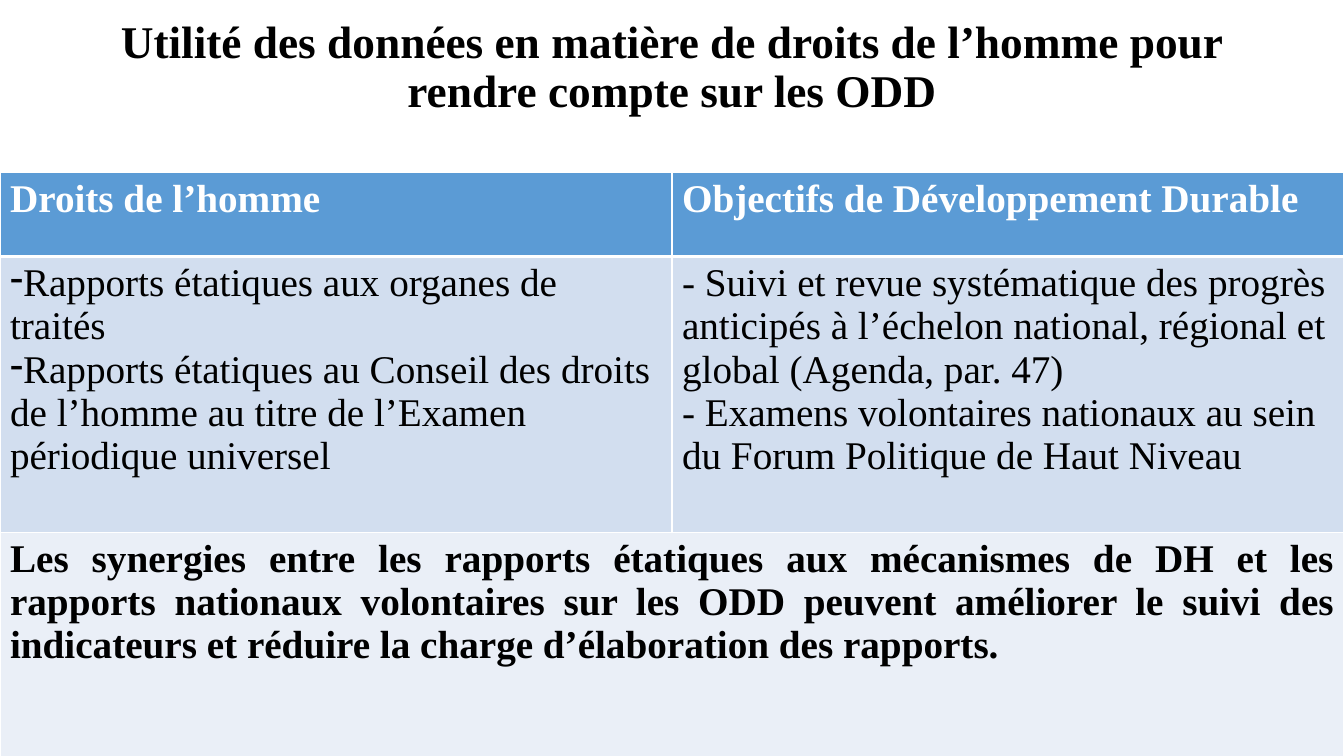
import pptx
import pptx.util
import pptx.dml.color
import pptx.enum.text
import pptx.oxml.ns
import lxml.etree

Cm = pptx.util.Cm
Pt = pptx.util.Pt
Align = pptx.enum.text.PP_ALIGN
WIDE, HIGH = 33.87, 19.05


def color(code):
    return pptx.dml.color.RGBColor.from_string(code)


def child(parent, tag, **attrs):
    return lxml.etree.SubElement(parent, pptx.oxml.ns.qn(tag), attrs)


class Page:
    face = "Times New Roman"
    dark, light = "000000", "FFFFFF"

    def __init__(self, deck):
        self.slide = deck.slides.add_slide(deck.slide_layouts[5])

    def style(self, para, size, tint, bold, align):
        para.font.name = self.face
        para.font.size = Pt(size)
        para.font.color.rgb = color(tint)
        para.font.bold = bold
        para.alignment = align

    def title(self, text, left, top, width, height):
        box = self.slide.shapes.title
        box.left, box.top, box.width, box.height = map(Cm, (left, top, width, height))
        frame = box.text_frame
        frame.auto_size = pptx.enum.text.MSO_AUTO_SIZE.NONE
        frame.vertical_anchor = pptx.enum.text.MSO_ANCHOR.MIDDLE
        para = frame.paragraphs[0]
        para.text = text
        para.add_line_break()
        para.line_spacing = 0.9
        self.style(para, 32.4, self.dark, True, Align.CENTER)

    def table(self, top, heights, cols):
        total = sum(heights)
        grid = self.slide.shapes.add_table(
            len(heights), cols, 0, Cm(top), Cm(WIDE), Cm(total)).table
        for row, height in zip(grid.rows, heights):
            row.height = Cm(height)
        for col in grid.columns:
            col.width = Cm(WIDE / cols)
        return grid

    def edges(self, cell, widths):
        props = cell._tc.get_or_add_tcPr()
        for side, width in zip("LRTB", widths):
            line = child(props, f"a:ln{side}", w=str(Pt(width)))
            child(child(line, "a:solidFill"), "a:srgbClr", val=self.light)

    def cell(self, cell, lines, fill, tint=dark, bold=False,
             align=Align.LEFT, bullet=None, base=1):
        self.edges(cell, (1, 1, 1, base))
        cell.fill.solid()
        cell.fill.fore_color.rgb = color(fill)
        cell.text_frame.text = "\n".join(lines)
        for para in cell.text_frame.paragraphs:
            self.style(para, 28, tint, bold, align)
            if bullet:
                props = para._p.get_or_add_pPr()
                props.set("marL", "0")
                props.set("indent", "0")
                mark = child(props, "a:buChar", char=bullet)
                # Bullets come before the run defaults
                props.insert(0, mark)


def main():
    deck = pptx.Presentation()
    deck.slide_width, deck.slide_height = Cm(WIDE), Cm(HIGH)
    page = Page(deck)

    # Title
    page.title("Utilité des données en matière de droits de l’homme pour "
               "rendre compte sur les ODD", 2.33, 0.71, 29.21, 3.38)

    # Table heads
    grid = page.table(4.35, (2.11, 6.95, 7.3), 2)
    heads = ("Droits de l’homme", "Objectifs de Développement Durable")
    for col, head in enumerate(heads):
        page.cell(grid.cell(0, col), [head], "5B9BD5", page.light, True, base=3)

    # Reports on each side
    rights = ["Rapports étatiques aux organes de traités",
              "Rapports étatiques au Conseil des droits de l’homme au titre "
              "de l’Examen périodique universel"]
    goals = ["- Suivi et revue systématique des progrès anticipés à l’échelon "
             "national, régional et global (Agenda, par. 47)",
             "- Examens volontaires nationaux au sein du Forum Politique de "
             "Haut Niveau"]
    page.cell(grid.cell(1, 0), rights, "D2DEEF", bullet="-")
    page.cell(grid.cell(1, 1), goals, "D2DEEF")

    # Joint conclusion
    last = grid.cell(2, 0)
    last.merge(grid.cell(2, 1))
    page.cell(last, ["Les synergies entre les rapports étatiques aux mécanismes "
                     "de DH et les rapports nationaux volontaires sur les ODD "
                     "peuvent améliorer le suivi des indicateurs et réduire la "
                     "charge d’élaboration des rapports."],
              "EAEFF7", bold=True, align=Align.JUSTIFY)

    deck.save("out.pptx")


if __name__ == "__main__":
    main()
